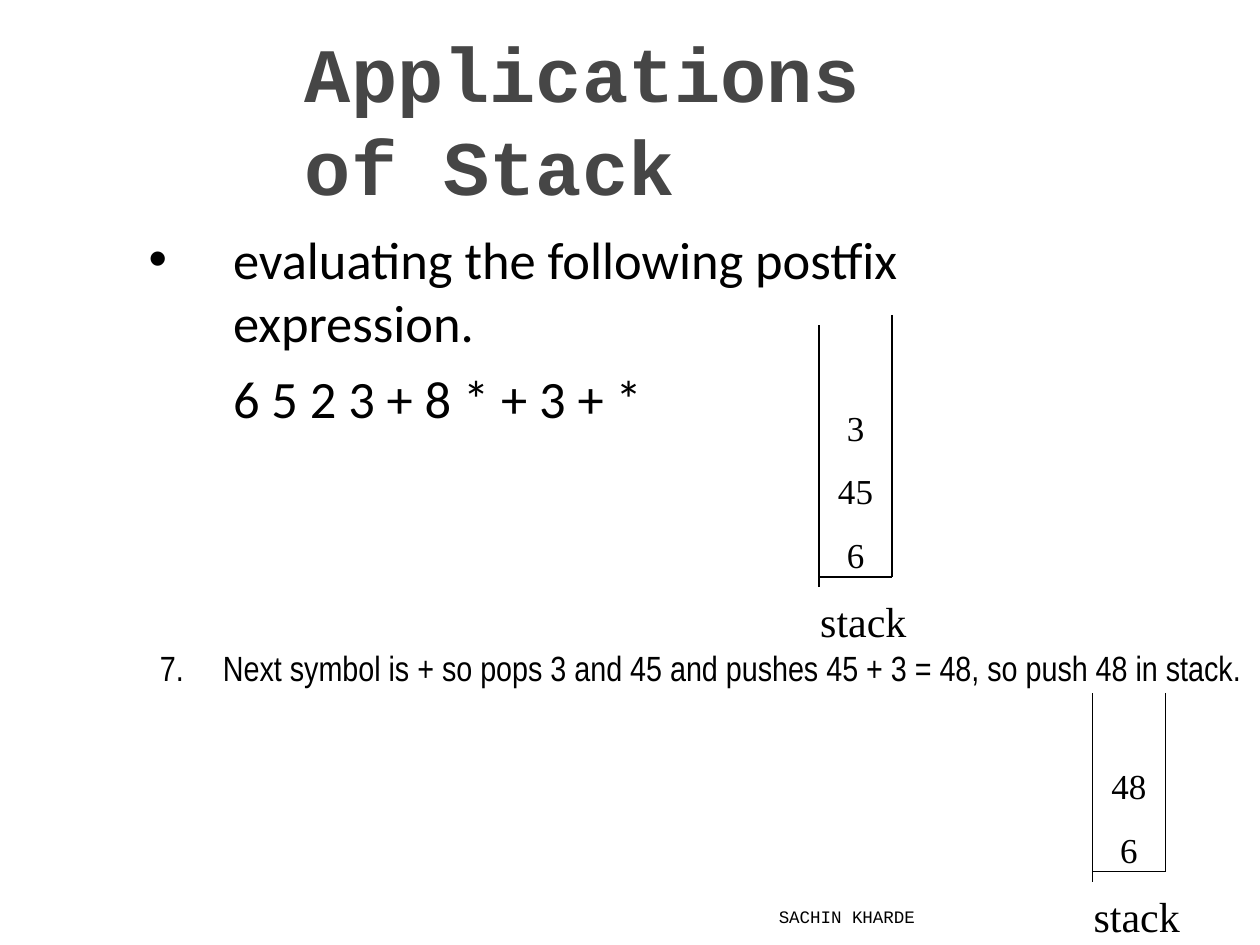
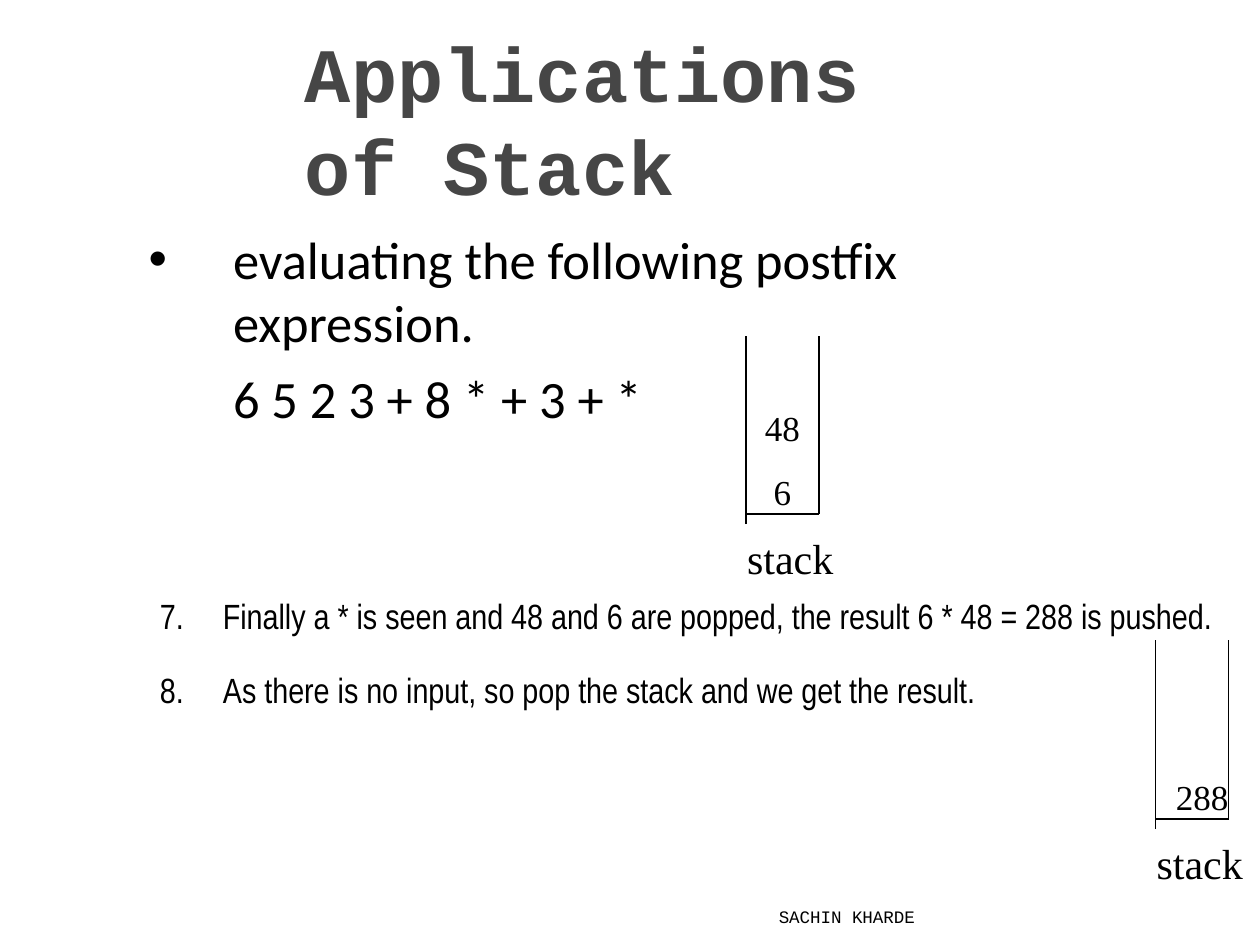
"""Build two slides that finish evaluating a postfix expression on a stack."""
from dataclasses import dataclass

from lxml import etree
from pptx import Presentation
from pptx.dml.color import RGBColor
from pptx.enum import text
from pptx.oxml import ns
from pptx.util import Inches, Pt

TITLE = "Applications of Stack"
INTRO = "evaluating the following postfix expression."
EXPRESSION = "6 5 2 3 + 8 * + 3 + *"
FOOTER = "SACHIN KHARDE"
LABEL = "stack"
CENTER, RIGHT = text.PP_ALIGN.CENTER, text.PP_ALIGN.RIGHT

SLIDES = [
    {
        "steps": ["Next symbol is + so pops 3 and 45 and pushes 45 + 3 = 48, so push 48 in stack."],
        "steps_top": 5.13,
        "stacks": [
            {"items": ["3", "45", "6"], "left": 6.5, "top": 2.5, "base": 4.58, "left_drop": 0.08},
            {"items": ["48", "6"], "left": 8.67, "top": 5.5, "base": 6.92},
        ],
    },
    {
        "steps": [
            "Finally a * is seen and 48 and 6 are popped, the result 6 * 48 = 288 is pushed.",
            "As there is no input, so pop the stack and we get the result.",
        ],
        "steps_top": 4.72,
        "stacks": [
            {"items": ["288"], "left": 9.17, "top": 5.08, "base": 6.5, "align": RIGHT},
            {"items": ["48", "6"], "left": 5.92, "top": 2.67, "base": 4.08},
        ],
    },
]
FIRST_STEP = 7
STACK_WIDTH, WALL_TAIL = 0.58, 0.08


@dataclass(frozen=True)
class Theme:
    ink: RGBColor = RGBColor(0, 0, 0)
    title_ink: RGBColor = RGBColor(0x46, 0x46, 0x46)
    title: tuple = ("Courier New", 44)
    body: tuple = ("Calibri", 30)
    bullet_font: str = "Arial"
    step: tuple = ("Arial Narrow", 20)
    item: tuple = ("Times New Roman", 20)
    label: tuple = ("Times New Roman", 24)
    footer: tuple = ("Courier New", 10)
    line: float = 0.75


THEME = Theme()


def style(p, face, color=THEME.ink, bold=False):
    p.font.name, p.font.size = face[0], Pt(face[1])
    p.font.bold, p.font.color.rgb = bold, color


def add_text(s, box, lines, face, gap=0, align=None, anchor=text.MSO_ANCHOR.TOP, wrap=True):
    tf = s.shapes.add_textbox(*map(Inches, box)).text_frame
    tf.word_wrap, tf.vertical_anchor = wrap, anchor
    tf.margin_left = tf.margin_top = tf.margin_right = tf.margin_bottom = 0
    for i, line in enumerate(lines):
        p = tf.paragraphs[0] if i == 0 else tf.add_paragraph()
        p.add_run().text = line
        p.alignment = align
        if i:
            p.space_before = Pt(gap)
        style(p, face)
    return tf


def hang(p, margin, indent, *bullet):
    pPr = p._p.get_or_add_pPr()
    pPr.set("marL", str(Inches(margin)))
    pPr.set("indent", str(Inches(indent)))
    for tag, attrs in bullet:
        mark = etree.Element(ns.qn(tag), attrs)
        pPr.insert_element_before(mark, "a:tabLst", "a:defRPr", "a:extLst")


def add_stack(s, items, left, top, base, left_drop=0, align=CENTER):
    right = left + STACK_WIDTH
    segments = [
        ((left, base), (right, base)),
        ((right, top), (right, base)),
        ((left, base + WALL_TAIL), (left, top + left_drop)),
    ]
    fb = s.shapes.build_freeform(*map(Inches, segments[0][0]))
    for start, end in segments:
        if start != segments[0][0]:
            fb.move_to(*map(Inches, start))
        fb.add_line_segments([tuple(map(Inches, end))], close=False)
    walls = fb.convert_to_shape()
    walls.shadow.inherit = False
    walls.fill.background()
    walls.line.color.rgb, walls.line.width = THEME.ink, Pt(THEME.line)
    add_text(s, (left, top, STACK_WIDTH, base - top - 0.01), items, THEME.item, gap=12.5,
             align=align, anchor=text.MSO_ANCHOR.BOTTOM)
    add_text(s, (left + 0.01, base + 0.15, 0.7, 0.38), [LABEL], THEME.label, wrap=False)


def add_steps(s, steps, top):
    tf = add_text(s, (1.26, top, 8.7, 0.35 * len(steps)), steps, THEME.step, gap=18)
    numbering = ("a:buAutoNum", {"type": "arabicPeriod", "startAt": str(FIRST_STEP)})
    for p in tf.paragraphs:
        hang(p, 0.51, -0.5, numbering)
        p.runs[0]._r.get_or_add_rPr().set("spc", "-4")


def add_frame(s):
    tf = add_text(s, (2.42, 0.2, 5.18, 1.48), [TITLE], THEME.title)
    p = tf.paragraphs[0]
    p.line_spacing = Pt(53)
    style(p, THEME.title, THEME.title_ink, bold=True)
    tf = add_text(s, (1.18, 1.8, 6, 1.62), [INTRO, EXPRESSION], THEME.body, gap=7.5)
    intro, expression = tf.paragraphs
    hang(intro, 0.67, -0.67, ("a:buFont", {"typeface": THEME.bullet_font}),
         ("a:buChar", {"char": "•"}))
    hang(expression, 0.67, 0)
    add_text(s, (4.89, 7.06, 2.37, 0.3), [FOOTER], THEME.footer, align=RIGHT,
             anchor=text.MSO_ANCHOR.BOTTOM)


def main():
    prs = Presentation()
    prs.slide_width, prs.slide_height = Inches(10), Inches(7.5)
    for content in SLIDES:
        s = prs.slides.add_slide(prs.slide_layouts[6])
        add_frame(s)
        for stack in content["stacks"]:
            add_stack(s, **stack)
        add_steps(s, content["steps"], content["steps_top"])
    prs.save("out.pptx")


if __name__ == "__main__":
    main()
